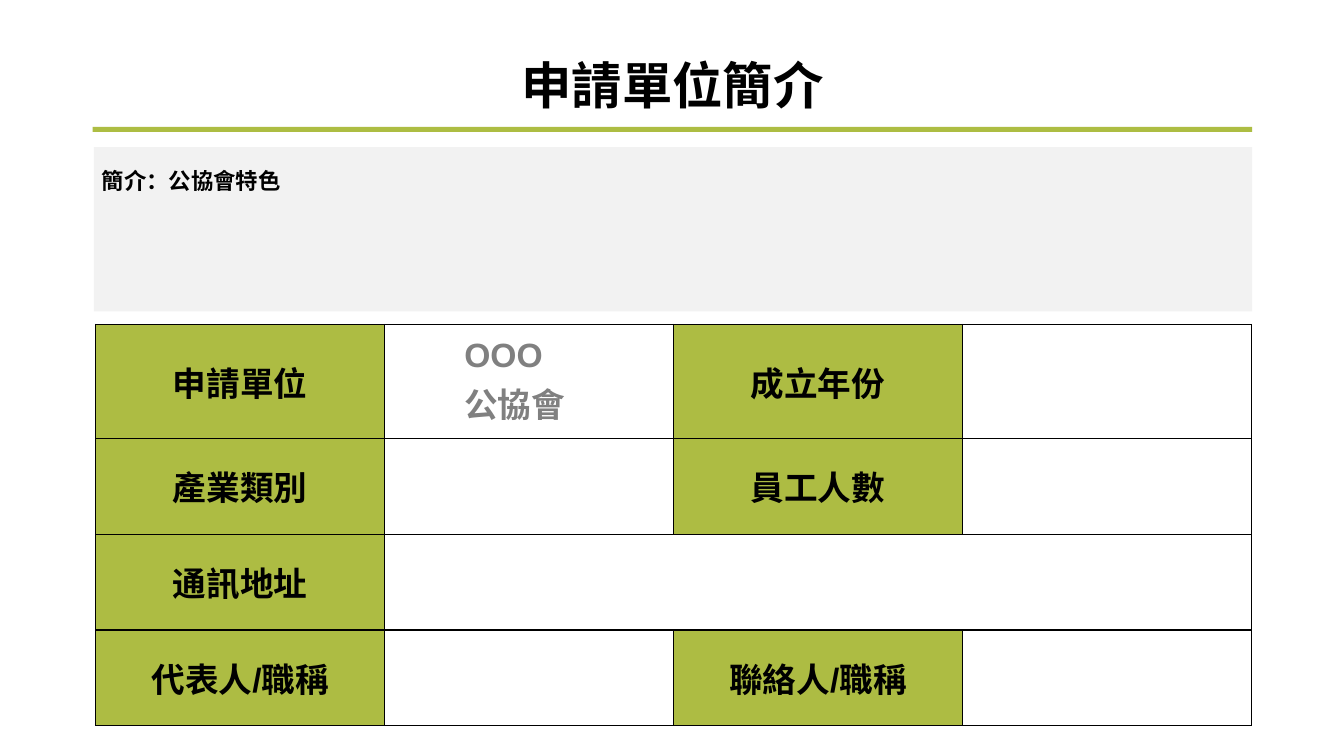
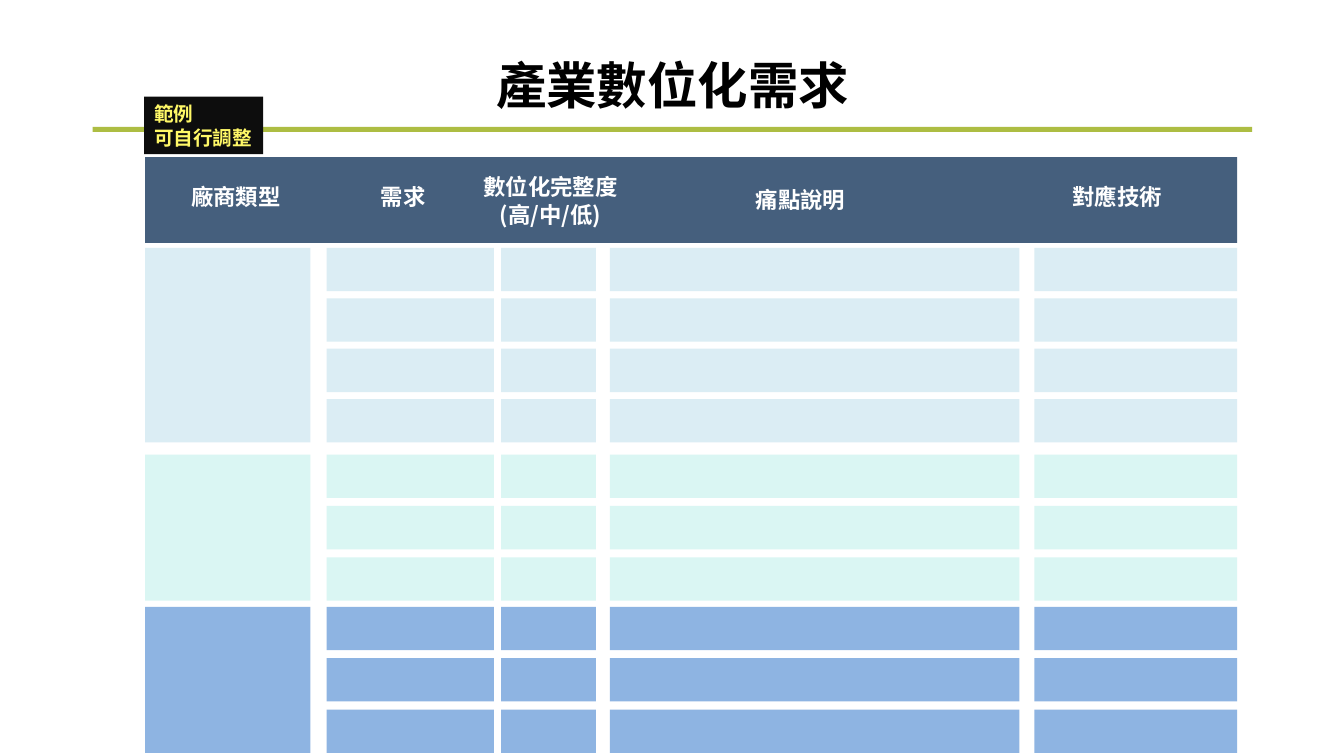
from lxml.etree import SubElement
from pptx import Presentation
from pptx.dml.color import RGBColor
from pptx.enum.shapes import MSO_SHAPE
from pptx.enum.text import MSO_ANCHOR, PP_ALIGN
from pptx.oxml.ns import qn
from pptx.util import Inches, Pt

# Shared style
BLACK = RGBColor(0x00, 0x00, 0x00)
WHITE = RGBColor(0xFF, 0xFF, 0xFF)
GRAY = RGBColor(0x80, 0x80, 0x80)
PANEL = RGBColor(0xF2, 0xF2, 0xF2)
RULE = RGBColor(0xAD, 0xBD, 0x43)
LABEL = RGBColor(0xAD, 0xBC, 0x43)
NAVY = RGBColor(0x45, 0x5F, 0x7D)
PALE_BLUE = RGBColor(0xDB, 0xED, 0xF4)
MINT = RGBColor(0xDA, 0xF6, 0xF3)
BLUE = RGBColor(0x8E, 0xB4, 0xE2)
BADGE = RGBColor(0x0D, 0x0D, 0x0D)
YELLOW = RGBColor(0xFF, 0xF8, 0x67)
CJK_FONT = "Noto Sans CJK SC"
LATIN_FONT = "Arial"

# Slide 1 content
PROFILE_TITLE = "申請單位簡介"
PROFILE_INTRO = "簡介：公協會特色"
PROFILE_ROWS = [
    ("申請單位", "OOO\n公協會", "成立年份", ""),
    ("產業類別", "", "員工人數", ""),
    ("通訊地址", "", "", ""),
    ("代表人/職稱", "", "聯絡人/職稱", ""),
]
ROW_HEIGHTS = (1.13, 0.95, 0.95, 0.95)
COLUMN_WIDTH = 2.865
ADDRESS_ROW = 2

# Slide 2 content
NEEDS_TITLE = "產業數位化需求"
BADGE_TEXT = "範例\n可自行調整"
HEADERS = [  # text, centre x, centre y
    ("廠商類型", 2.34, 1.95),
    ("需求", 4.0, 1.95),
    ("數位化完整度\n(高/中/低)", 5.46, 1.99),
    ("痛點說明", 7.94, 1.98),
    ("對應技術", 11.08, 1.95),
]
TYPE_COLUMN = (1.44, 1.64)
DETAIL_COLUMNS = [(3.24, 1.66), (4.97, 0.94), (6.05, 4.06), (10.26, 2.01)]
GROUPS = [  # colour, top, number of rows, row pitch
    (PALE_BLUE, 2.46, 4, 0.5),
    (MINT, 4.51, 3, 0.51),
    (BLUE, 6.02, 3, 0.51),
]
BAR_HEIGHT = 0.43


def write_text(frame, text, size=16, color=BLACK, font=CJK_FONT, align=PP_ALIGN.LEFT,
               anchor=MSO_ANCHOR.MIDDLE, insets=(0, 0, 0, 0), wrap=True,
               gap=0, line_spacing=None, indent=0):
    """Fill a text frame, one paragraph per line of text."""
    frame.word_wrap = wrap
    frame.vertical_anchor = anchor
    (frame.margin_left, frame.margin_top,
     frame.margin_right, frame.margin_bottom) = map(Inches, insets)
    for index, line in enumerate(text.split("\n")):
        paragraph = frame.paragraphs[0] if index == 0 else frame.add_paragraph()
        paragraph.alignment = align
        if index:
            paragraph.space_before = Pt(gap)
        if line_spacing:
            paragraph.line_spacing = line_spacing
        if indent:
            paragraph._p.get_or_add_pPr().set("marL", str(Inches(indent)))
        run = paragraph.add_run()
        run.text = line
        run.font.size = Pt(size)
        run.font.bold = True
        run.font.color.rgb = color
        run.font.name = font
        SubElement(run._r.get_or_add_rPr(), qn("a:ea"), typeface=CJK_FONT)


def add_text(slide, text, left, top, width, height, **text_format):
    box = slide.shapes.add_textbox(*map(Inches, (left, top, width, height)))
    write_text(box.text_frame, text, **text_format)


def add_block(slide, left, top, width, height, color):
    shape = slide.shapes.add_shape(
        MSO_SHAPE.RECTANGLE, *map(Inches, (left, top, width, height)))
    shape.shadow.inherit = False
    shape.fill.solid()
    shape.fill.fore_color.rgb = color
    shape.line.fill.background()
    return shape


def add_titled_slide(presentation, title):
    slide = presentation.slides.add_slide(presentation.slide_layouts[6])
    add_block(slide, 0.92, 1.26, 11.5, 0.05, RULE)
    add_text(slide, title, 0.67, 0.45, 12, 0.85, size=36,
             align=PP_ALIGN.CENTER, line_spacing=0.9)
    return slide


def style_cell(cell, color):
    properties = cell._tc.get_or_add_tcPr()
    for side in ("a:lnL", "a:lnR", "a:lnT", "a:lnB"):
        border = SubElement(properties, qn(side), w=str(Pt(1)))
        fill = SubElement(border, qn("a:solidFill"))
        SubElement(fill, qn("a:srgbClr"), val=str(BLACK))
    if color is None:
        cell.fill.background()
    else:
        cell.fill.solid()
        cell.fill.fore_color.rgb = color


def build_profile(presentation):
    slide = add_titled_slide(presentation, PROFILE_TITLE)

    # Introduction panel
    panel = add_block(slide, 0.93, 1.46, 11.49, 1.63, PANEL)
    write_text(panel.text_frame, PROFILE_INTRO, align=PP_ALIGN.JUSTIFY,
               anchor=MSO_ANCHOR.TOP, insets=(0.08, 0.2, 0.08, 0.04))

    # Details table
    columns = len(PROFILE_ROWS[0])
    table = slide.shapes.add_table(
        len(PROFILE_ROWS), columns, Inches(0.95), Inches(3.22),
        Inches(COLUMN_WIDTH * columns), Inches(sum(ROW_HEIGHTS))).table
    table.first_row = table.horz_banding = False
    for column in table.columns:
        column.width = Inches(COLUMN_WIDTH)
    for row, height in zip(table.rows, ROW_HEIGHTS):
        row.height = Inches(height)
    table.cell(ADDRESS_ROW, 1).merge(table.cell(ADDRESS_ROW, columns - 1))

    for row_index, texts in enumerate(PROFILE_ROWS):
        for column_index, text in enumerate(texts):
            cell = table.cell(row_index, column_index)
            is_label = column_index % 2 == 0 and bool(text)
            style_cell(cell, LABEL if is_label else None)
            if not text:
                continue
            cell.margin_left = cell.margin_right = 0
            cell.margin_top = cell.margin_bottom = Inches(0.12)
            cell.vertical_anchor = MSO_ANCHOR.MIDDLE
            write_text(cell.text_frame, text, size=24, font=LATIN_FONT,
                       color=BLACK if is_label else GRAY,
                       align=PP_ALIGN.CENTER if is_label else PP_ALIGN.LEFT,
                       insets=(0, 0.12, 0, 0.12), gap=3.1,
                       indent=0 if is_label else 0.79)


def build_needs(presentation):
    slide = add_titled_slide(presentation, NEEDS_TITLE)

    # Header band
    add_block(slide, 1.44, 1.56, 10.83, 0.85, NAVY)
    for text, center, middle in HEADERS:
        add_text(slide, text, center - 0.8, middle - 0.3, 1.6, 0.6,
                 color=WHITE, align=PP_ALIGN.CENTER, gap=1.1)

    # Groups: one type block beside rows of detail bars
    for color, top, count, pitch in GROUPS:
        left, width = TYPE_COLUMN
        add_block(slide, left, top, width, (count - 1) * pitch + BAR_HEIGHT, color)
        for index in range(count):
            for left, width in DETAIL_COLUMNS:
                add_block(slide, left, top + index * pitch, width, BAR_HEIGHT, color)

    # Example badge
    badge = add_block(slide, 1.43, 0.96, 1.18, 0.57, BADGE)
    write_text(badge.text_frame, BADGE_TEXT, size=14, color=YELLOW, font=LATIN_FONT,
               insets=(0.1, 0.05, 0.1, 0.05), wrap=False)


def main():
    presentation = Presentation()
    presentation.slide_width = Inches(13.33)
    presentation.slide_height = Inches(7.5)
    build_profile(presentation)
    build_needs(presentation)
    presentation.save("out.pptx")


if __name__ == "__main__":
    main()
